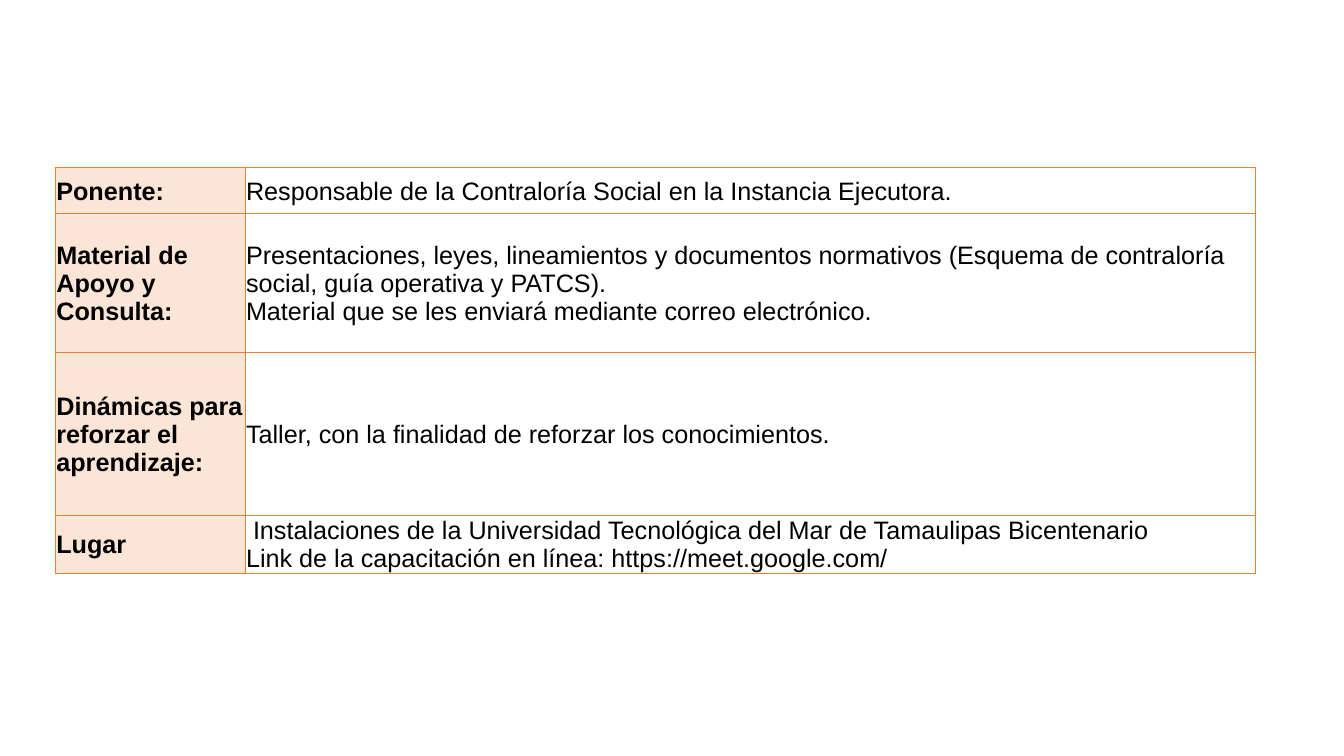
from lxml.etree import SubElement
from pptx import Presentation
from pptx.dml.color import RGBColor
from pptx.enum.text import MSO_ANCHOR
from pptx.oxml.ns import qn
from pptx.util import Cm, Pt


def paint(fill, color):
    fill.solid()
    fill.fore_color.rgb = RGBColor.from_string(color)


def border(cell, color, width):
    props = cell._tc.get_or_add_tcPr()
    for spot, side in enumerate(("lnL", "lnR", "lnT", "lnB")):
        line = SubElement(props, qn("a:" + side), w=str(Pt(width)))
        solid = SubElement(line, qn("a:solidFill"))
        SubElement(solid, qn("a:srgbClr"), val=color)
        props.insert(spot, line)


deck = Presentation()
deck.slide_width, deck.slide_height = Cm(33.87), Cm(19.05)
slide = deck.slides.add_slide(deck.slide_layouts[6])

rows = [
    (1.16, "Ponente:", "Responsable de la Contraloría Social en la Instancia Ejecutora."),
    (3.5, "Material de Apoyo y Consulta:",
     "Presentaciones, leyes, lineamientos y documentos normativos (Esquema de contraloría "
     "social, guía operativa y PATCS). \vMaterial que se les enviará mediante correo electrónico."),
    (4.1, "Dinámicas para reforzar el aprendizaje:",
     "Taller, con la finalidad de reforzar los conocimientos."),
    (1.47, "Lugar",
     " Instalaciones de la Universidad Tecnológica del Mar de Tamaulipas Bicentenario\n"
     "Link de la capacitación en línea: https://meet.google.com/"),
]
widths = [4.78, 25.45]
high = sum(row[0] for row in rows)
table = slide.shapes.add_table(
    len(rows), 2, Cm(1.4), Cm(4.23), Cm(sum(widths)), Cm(high)).table
table.first_row = table.horz_banding = False
for column, width in zip(table.columns, widths):
    column.width = Cm(width)

for r, (height, *texts) in enumerate(rows):
    table.rows[r].height = Cm(height)
    for c, text in enumerate(texts):
        cell = table.cell(r, c)
        cell.text_frame.text = text
        cell.vertical_anchor = MSO_ANCHOR.MIDDLE
        cell.margin_left = cell.margin_right = cell.margin_top = Cm(0.02)
        cell.margin_bottom = 0
        paint(cell.fill, ("FBE5D6", "FFFFFF")[c])
        border(cell, "ED7D31", 1)
        for para in cell.text_frame.paragraphs:
            font = para.font
            font.name, font.size, font.bold = "Arial", Pt(18), c == 0
            paint(font.fill, "000000")

deck.save("out.pptx")
